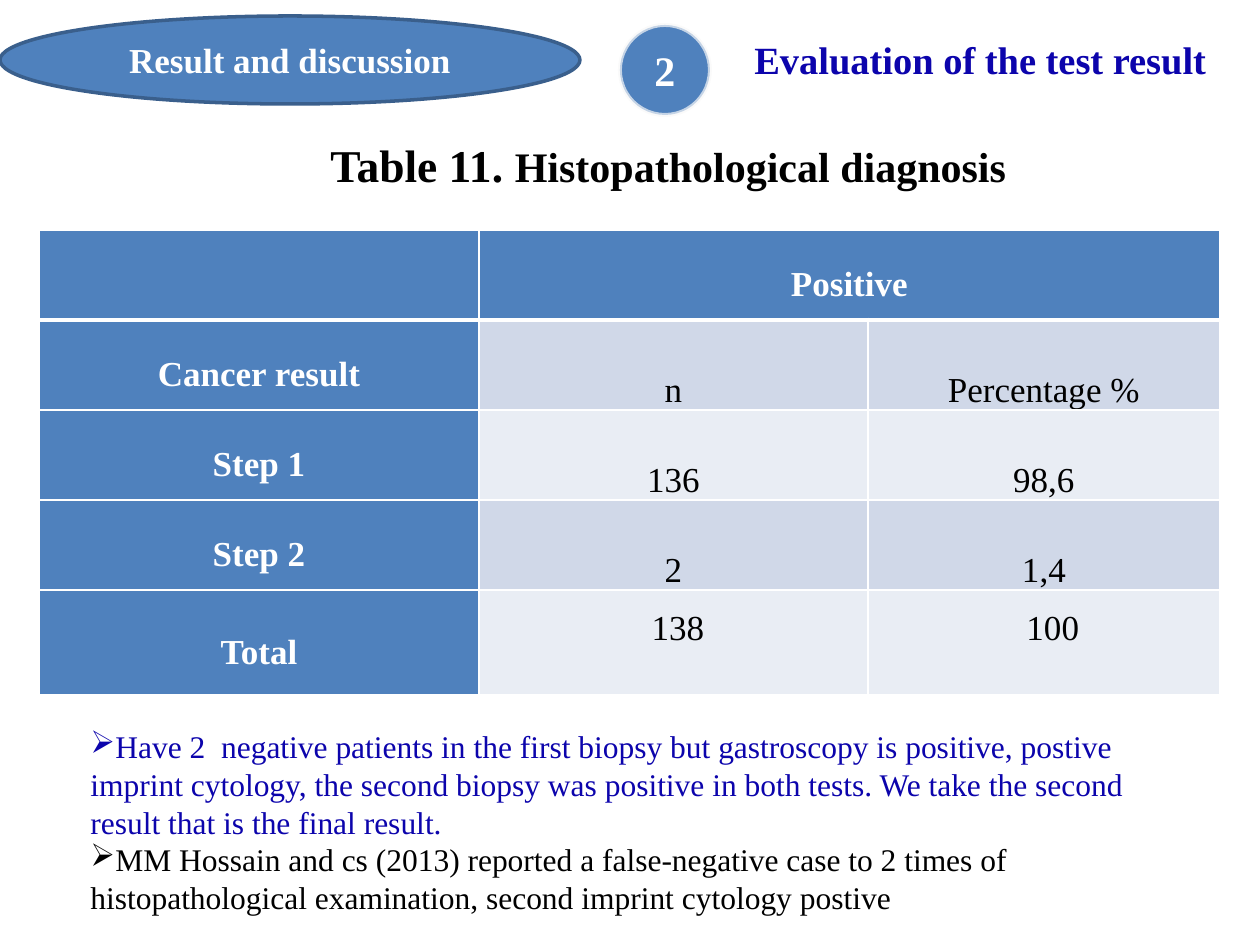
from lxml.etree import SubElement
from pptx import Presentation
from pptx.dml.color import RGBColor
from pptx.enum.shapes import MSO_SHAPE as SHAPE
from pptx.enum.text import MSO_ANCHOR as ANCHOR, PP_ALIGN as ALIGN
from pptx.oxml.ns import qn
from pptx.util import Pt

EMU_PER_PX = 914400 / 126
BLUE, DARK_BLUE, INK_BLUE = "4F81BD", "3A5F8C", "0C04AC"
WHITE, BLACK, PALE = "FFFFFF", "000000", "F8F8F8"
BANDS = ("D0D8E8", "E9EDF4")


def px(n):
    return round(n * EMU_PER_PX)


def rgb(value):
    return RGBColor.from_string(value)


class Deck:
    """Holds the style and the current slide."""

    font = "Times New Roman"

    def __init__(self, width, height):
        self.prs = Presentation()
        self.prs.slide_width, self.prs.slide_height = px(width), px(height)
        self.s = self.prs.slides.add_slide(self.prs.slide_layouts[6])

    def run(self, p, text, size, color, bold=False):
        r = p.add_run()
        r.text = text
        f = r.font
        f.name, f.size, f.bold = self.font, Pt(size), bold
        f.color.rgb = rgb(color)

    def ellipse(self, box, text, size, line, line_width, alpha=None, wrap=True):
        sp = self.s.shapes.add_shape(SHAPE.OVAL, *map(px, box))
        sp.shadow.inherit = False
        sp.fill.solid()
        sp.fill.fore_color.rgb = rgb(BLUE)
        sp.line.color.rgb = rgb(line)
        sp.line.width = Pt(line_width)
        if alpha:
            clr = sp.line._get_or_add_ln().find(".//" + qn("a:srgbClr"))
            SubElement(clr, qn("a:alpha"), val=str(alpha * 1000))
        tf = sp.text_frame
        tf.word_wrap = wrap
        tf.vertical_anchor = ANCHOR.MIDDLE
        p = tf.paragraphs[0]
        p.alignment = ALIGN.CENTER
        self.run(p, text, size, WHITE, True)

    def text(self, box, paragraphs, top=6, indent=0, before=0, bullet=None):
        """Each paragraph is a list of runs: (text, size, color, bold)."""
        tf = self.s.shapes.add_textbox(*map(px, box)).text_frame
        tf.word_wrap = True
        tf.margin_top = px(top)
        for i, runs in enumerate(paragraphs):
            p = tf.add_paragraph() if i else tf.paragraphs[0]
            p.space_before = Pt(before)
            pPr = p._p.get_or_add_pPr()
            pPr.set("marL", str(px(indent)))
            if bullet:
                SubElement(pPr, qn("a:buChar"), char=bullet)
            for run in runs:
                self.run(p, *run)

    def borders(self, cell, bottom):
        tcPr = cell._tc.get_or_add_tcPr()
        for side, width in (("L", 1), ("R", 1), ("T", 1), ("B", bottom)):
            ln = SubElement(tcPr, qn("a:ln" + side), w=str(Pt(width)))
            fill = SubElement(ln, qn("a:solidFill"))
            SubElement(fill, qn("a:srgbClr"), val=WHITE)

    def cell(self, cell, text, fill, color, bold, anchor, indent=0, bottom=1):
        self.borders(cell, bottom)
        cell.fill.solid()
        cell.fill.fore_color.rgb = rgb(fill)
        cell.margin_left = cell.margin_right = px(9)
        cell.margin_top = cell.margin_bottom = 0
        cell.vertical_anchor = anchor
        if text:
            p = cell.text_frame.paragraphs[0]
            p.alignment = ALIGN.CENTER
            p.line_spacing = 1.5
            p.space_before = Pt(2)
            p._p.get_or_add_pPr().set("marL", str(px(indent)))
            self.run(p, text, 20, color, bold)

    def table(self, left, top, widths, heights, rows):
        """First row and column are headers; the first row spans its last two cells."""
        box = (left, top, sum(widths), sum(heights))
        t = self.s.shapes.add_table(len(rows), len(widths), *map(px, box)).table
        t.first_row = t.horz_banding = False
        for col, width in zip(t.columns, widths):
            col.width = px(width)
        for row, height in zip(t.rows, heights):
            row.height = px(height)
        last = len(rows) - 1
        for i, row in enumerate(rows):
            indent = 9 if i == last else 0
            for j, text in enumerate(row):
                if i == 0 or j == 0:
                    style = (BLUE, WHITE, True, ANCHOR.MIDDLE)
                else:
                    anchor = ANCHOR.TOP if i == last else ANCHOR.BOTTOM
                    style = (BANDS[(i - 1) % 2], BLACK, False, anchor)
                self.cell(t.cell(i, j), text, *style, indent, 1 if i else 3)
        t.cell(0, 1).merge(t.cell(0, 2))


def main():
    deck = Deck(1260, 945)
    deck.text((215, 131, 842, 73),
              [[("Table 11. ", 26, BLACK, True),
                ("Histopathological diagnosis", 24, BLACK, True)]],
              indent=103, before=5)
    deck.ellipse((620, 25, 90, 90), "2", 24, PALE, 2.25, alpha=70, wrap=False)
    deck.text((742, 11, 503, 144),
              [[("Evaluation of the test result", 22, INK_BLUE, True)]], top=25)
    deck.ellipse((0, 16, 580, 88), "Result and discussion", 20, DARK_BLUE, 2)
    deck.text((78, 721, 1101, 204), [
        [("Have 2  negative patients in the first biopsy but gastroscopy is "
          "positive, postive imprint cytology, the second biopsy was positive "
          "in both tests. We take the second result that is the final result.",
          18, INK_BLUE)],
        [("MM Hossain and cs (2013) reported a false-negative case to 2 times "
          "of histopathological examination, second imprint cytology postive",
          18, BLACK)],
    ], bullet="➢")
    deck.table(39, 230, (440, 389, 352), (90, 90, 90, 90, 105), [
        ("", "Positive", ""),
        ("Cancer result", "n", "Percentage %"),
        ("Step 1", "136", "98,6"),
        ("Step 2", "2", "1,4"),
        ("Total ", "138", " 100"),
    ])
    deck.prs.save("out.pptx")


if __name__ == "__main__":
    main()
